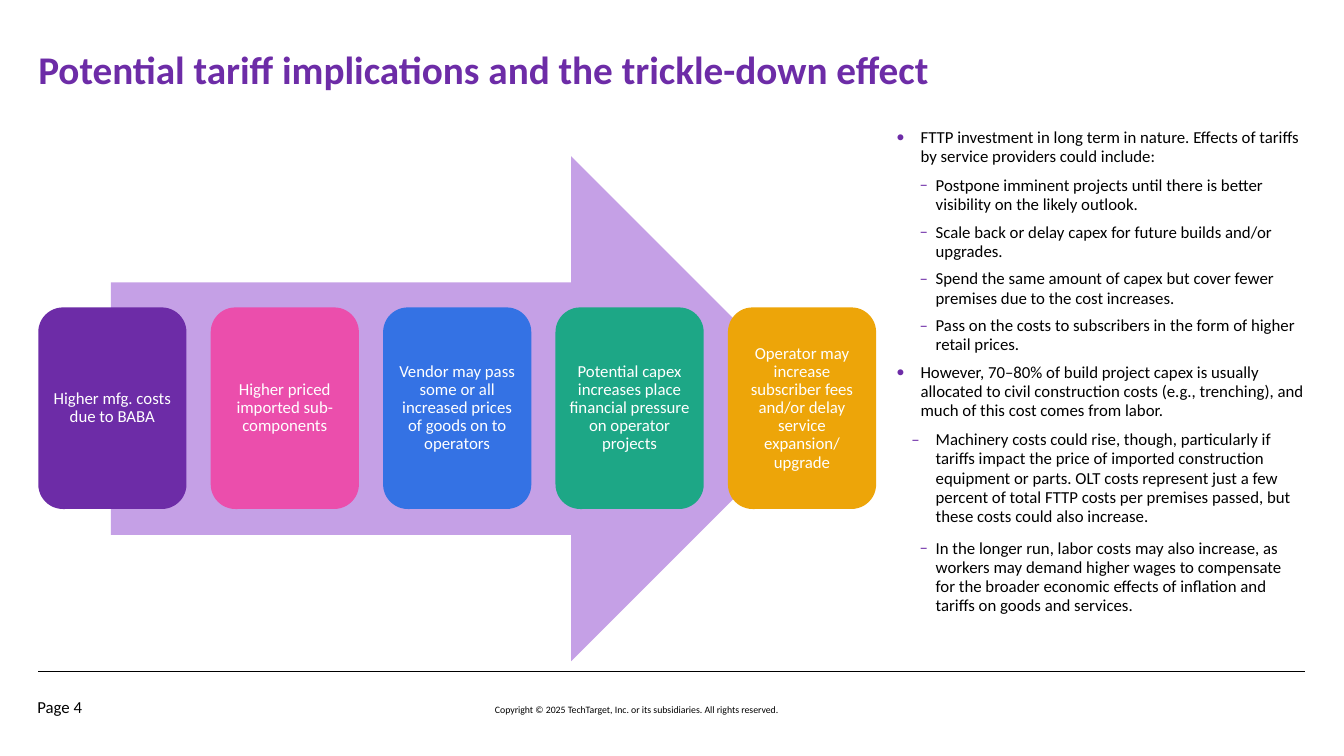
from lxml import etree
from pptx import Presentation
from pptx.dml.color import RGBColor
from pptx.enum.shapes import MSO_CONNECTOR, MSO_SHAPE
from pptx.enum.text import MSO_ANCHOR, PP_ALIGN
from pptx.oxml.ns import qn
from pptx.util import Pt

PX = 9144  # 100 px to the inch
LEFT, CENTER = PP_ALIGN.LEFT, PP_ALIGN.CENTER
TOP, MIDDLE, BOTTOM = MSO_ANCHOR.TOP, MSO_ANCHOR.MIDDLE, MSO_ANCHOR.BOTTOM
PURPLE, BLACK, WHITE = "6D2CA7", "000000", "FFFFFF"


def rgb(value):
    return RGBColor.from_string(value)


def write(shape, text, size, color, spacing, align=LEFT, anchor=TOP, inset=0, bold=False):
    """Fill the shape's first paragraph and return that paragraph."""
    frame = shape.text_frame
    frame.word_wrap = True
    frame.vertical_anchor = anchor
    frame.margin_left = frame.margin_right = inset * PX
    frame.margin_top = frame.margin_bottom = inset * PX
    paragraph = frame.paragraphs[0]
    paragraph.alignment = align
    paragraph.line_spacing = spacing
    run = paragraph.add_run()
    run.text = text
    run.font.name = "Calibri"
    run.font.size = Pt(size)
    run.font.bold = bold
    run.font.color.rgb = rgb(color)
    return paragraph


prs = Presentation()
prs.slide_width, prs.slide_height = 1333 * PX, 750 * PX
slide = prs.slides.add_slide(prs.slide_layouts[6])
shapes = slide.shapes

# Footer
rule = shapes.add_connector(MSO_CONNECTOR.STRAIGHT, 38 * PX, 666 * PX, 1294 * PX, 666 * PX)
rule.line.color.rgb = rgb(BLACK)
rule.line.width = Pt(1)
etree.SubElement(rule._element.spPr, qn("a:effectLst"))

copyright_line = shapes.add_textbox(385 * PX, 684 * PX, 493 * PX, 26 * PX)
write(copyright_line, "Copyright © 2025 TechTarget, Inc. or its subsidiaries. All rights reserved.",
      7, BLACK, 0.85, CENTER, BOTTOM)
page_number = shapes.add_textbox(37 * PX, 671 * PX, 99 * PX, 40 * PX)
write(page_number, "Page 4", 12, BLACK, 0.85, anchor=BOTTOM)

# Title
title = shapes.add_textbox(38 * PX, 52 * PX, 1237 * PX, 75 * PX)
write(title, "Potential tariff implications and the trickle-down effect", 28, PURPLE, 0.85, bold=True)

# Commentary: level, hanging indent in px, space after in points, text
POINT, SUBPOINT, WIDE_SUBPOINT = (0, 24, 4), (1, 16, 3), (1, 24, 6)
commentary = [
    (POINT, "FTTP investment in long term in nature. Effects of tariffs by service providers could include:"),
    (SUBPOINT, "Postpone imminent projects until there is better visibility on the likely outlook."),
    (SUBPOINT, "Scale back or delay capex for future builds and/or upgrades."),
    (SUBPOINT, "Spend the same amount of capex but cover fewer premises due to the cost increases."),
    (SUBPOINT, "Pass on the costs to subscribers in the form of higher retail prices."),
    (POINT, "However, 70–80% of build project capex is usually allocated to civil construction costs "
            "(e.g., trenching), and much of this cost comes from labor."),
    (WIDE_SUBPOINT, "Machinery costs could rise, though, particularly if tariffs impact the price of imported "
                    "construction equipment or parts. OLT costs represent just a few percent of total FTTP "
                    "costs per premises passed, but these costs could also increase."),
    (SUBPOINT, "In the longer run, labor costs may also increase, as workers may demand higher wages to "
               "compensate for the broader economic effects of inflation and tariffs on goods and services."),
]
notes_box = shapes.add_textbox(889 * PX, 127 * PX, 405 * PX, 528 * PX)
notes_frame = notes_box.text_frame
notes_frame.word_wrap = True
notes_frame.margin_left = notes_frame.margin_right = 0
notes_frame.margin_top = notes_frame.margin_bottom = 0
for index, ((level, hanging, space_after), text) in enumerate(commentary):
    paragraph = notes_frame.add_paragraph() if index else notes_frame.paragraphs[0]
    paragraph.level = level
    paragraph.line_spacing = 0.95
    paragraph.space_before = Pt(3 if index else 0)
    paragraph.space_after = Pt(space_after)
    properties = paragraph._p.get_or_add_pPr()
    properties.set("marL", str((24, 39)[level] * PX))
    properties.set("indent", str(-hanging * PX))
    bullet_color = etree.SubElement(properties, qn("a:buClr"))
    etree.SubElement(bullet_color, qn("a:srgbClr"), val=PURPLE)
    etree.SubElement(properties, qn("a:buFont"), typeface="Calibri")
    etree.SubElement(properties, qn("a:buChar"), char="•–"[level])
    run = paragraph.add_run()
    run.text = text
    run.font.name = "Calibri"
    run.font.size = Pt(12)
    run.font.color.rgb = rgb(BLACK)

# Trickle-down process
arrow = shapes.add_shape(MSO_SHAPE.RIGHT_ARROW, 110 * PX, 155 * PX, 707 * PX, 501 * PX)
arrow.shadow.inherit = False
arrow.fill.solid()
arrow.fill.fore_color.rgb = rgb("C5A0E6")
arrow.line.fill.background()

stages = [
    ("Higher mfg. costs due to BABA", PURPLE),
    ("Higher priced imported sub-components", "EB4EAC"),
    ("Vendor may pass some or all increased prices of goods on to operators", "3472E4"),
    ("Potential capex increases place financial pressure on operator projects", "1DA786"),
    ("Operator may increase subscriber fees and/or delay service expansion/ upgrade", "EDA509"),
]
for index, (text, color) in enumerate(stages):
    stage = shapes.add_shape(MSO_SHAPE.ROUNDED_RECTANGLE,
                             (38 + 171 * index) * PX, 305 * PX, 147 * PX, 200 * PX)
    stage.shadow.inherit = False
    stage.fill.solid()
    stage.fill.fore_color.rgb = rgb(color)
    stage.line.fill.background()
    write(stage, text, 12, WHITE, 0.9, CENTER, MIDDLE, inset=5)

prs.save("out.pptx")
